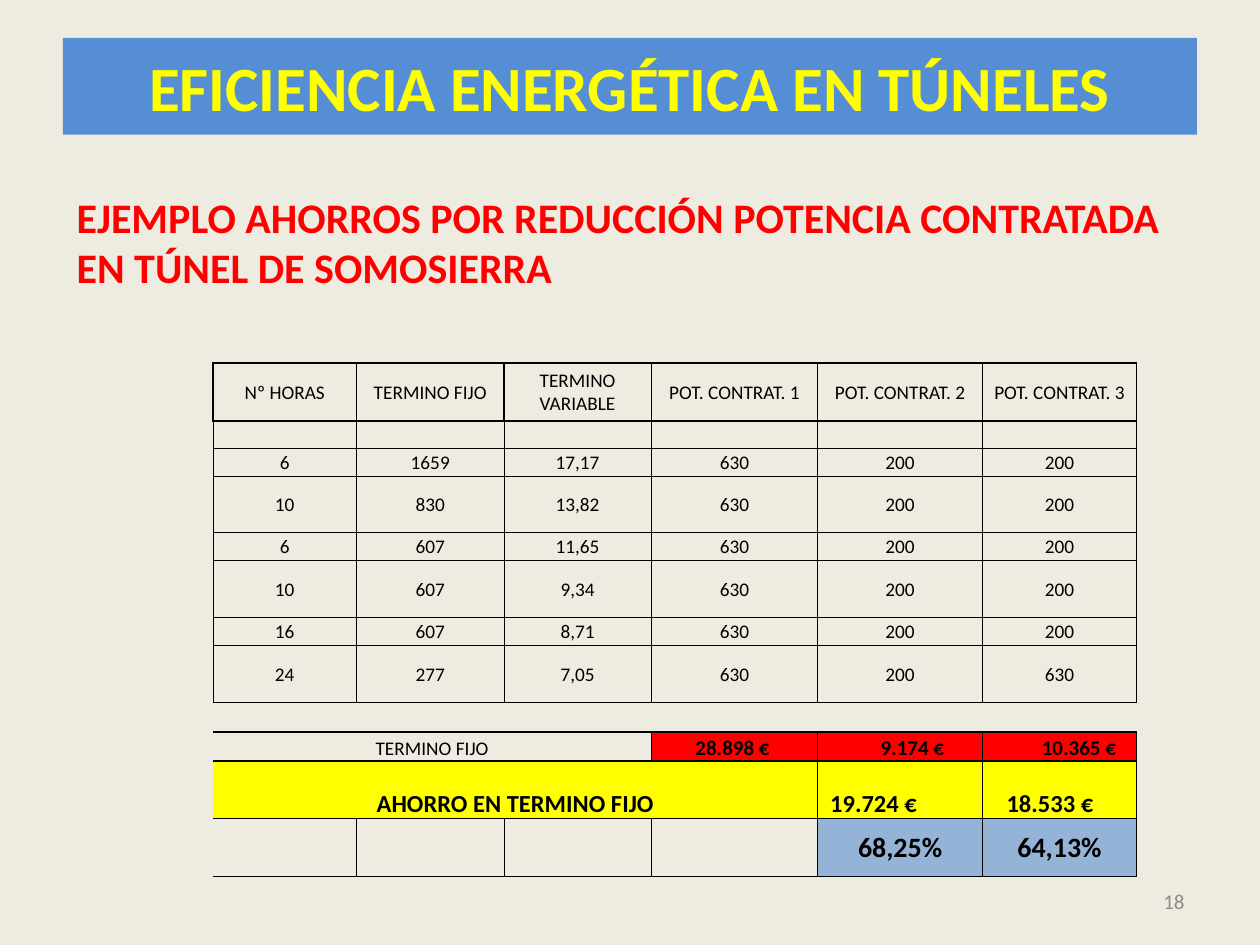
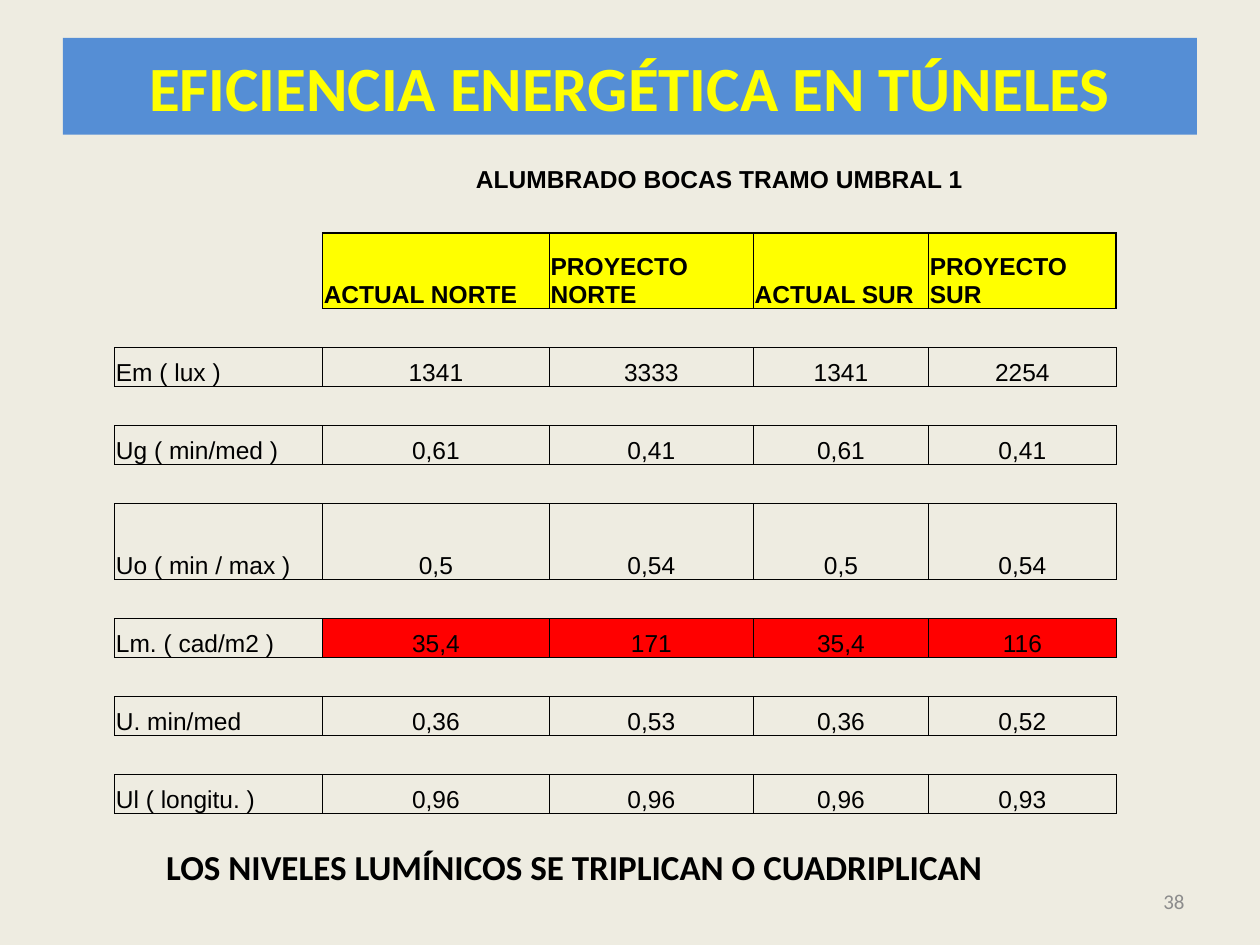
from lxml import etree
from pptx import Presentation
from pptx.dml.color import RGBColor
from pptx.enum.shapes import MSO_SHAPE
from pptx.enum.text import MSO_ANCHOR, PP_ALIGN
from pptx.oxml.ns import qn
from pptx.util import Inches, Pt

BACKGROUND, BAND, PAGE_GREY = "EEECE1", "558ED5", "8C8C8C"
RED, YELLOW, PALE_BLUE, BLACK = "FF0000", "FFFF00", "95B3D7", "000000"
TITLE = "EFICIENCIA ENERGÉTICA EN TÚNELES"
NO_GRID_STYLE = "{2D5ABB26-0587-4C30-8999-92F81FD0307C}"
LEFT, CENTER, RIGHT = PP_ALIGN.LEFT, PP_ALIGN.CENTER, PP_ALIGN.RIGHT
MIDDLE, BOTTOM, TOP = MSO_ANCHOR.MIDDLE, MSO_ANCHOR.BOTTOM, MSO_ANCHOR.TOP

# Border digits are left, top, right, bottom, in half points.


def kind(border, size, bold=False, align=CENTER, anchor=BOTTOM, fill=None):
    return dict(border=border, size=size, bold=bold, align=align,
                anchor=anchor, fill=fill)


COST = kind("1212", 12, True, LEFT, fill=RED)
SAVING = kind("2212", 14, True, LEFT, fill=YELLOW)
RATIO = kind("1212", 16, True, anchor=MIDDLE, fill=PALE_BLUE)
KINDS = {
    "blank": kind("0000", 8),
    "heading": kind("2222", 11, anchor=MIDDLE),
    "value": kind("1111", 11, anchor=MIDDLE),
    "fixed term": kind("0202", 11),
    "cost": COST,
    "last cost": {**COST, "border": "1222"},
    "saving label": kind("0222", 14, True, fill=YELLOW),
    "saving": SAVING,
    "last saving": {**SAVING, "border": "1222"},
    "ratio": RATIO,
    "last ratio": {**RATIO, "border": "1222"},
    "foot": kind("1212", 8),
    "first foot": kind("0212", 8),
    "caption": kind("0000", 14, True),
    "scheme": kind("2222", 14, True, LEFT, fill=YELLOW),
    "measure": kind("1111", 14, align=LEFT),
    "reading": kind("1111", 14),
    "luminance": kind("1111", 14, fill=RED),
}

POWER_COLUMNS = [1.14, 1.17, 1.17, 1.32, 1.31, 1.22]
POWER_VALUES = [
    (0.22, ["6", "1659", "17,17", "630", "200", "200"]),
    (0.45, ["10", "830", "13,82", "630", "200", "200"]),
    (0.22, ["6", "607", "11,65", "630", "200", "200"]),
    (0.45, ["10", "607", "9,34", "630", "200", "200"]),
    (0.22, ["16", "607", "8,71", "630", "200", "200"]),
    (0.46, ["24", "277", "7,05", "630", "200", "630"]),
]
POWER_ROWS = [
    (0.46, "heading", ["Nº HORAS", "TERMINO FIJO", "TERMINO VARIABLE",
                       "POT. CONTRAT. 1", "POT. CONTRAT. 2", "POT. CONTRAT. 3"]),
    (0.22, "value", [""] * 6),
    *[(height, "value", values) for height, values in POWER_VALUES],
    (0.23, "blank", [""] * 6),
    (0.23, "cost", [("TERMINO FIJO", "fixed term", 0, 3), ("28.898 €", "cost", 0.34, 1),
                    ("9.174 €", "cost", 0.49, 1), ("10.365 €", "last cost", 0.46, 1)]),
    (0.46, "saving", [("AHORRO EN TERMINO FIJO", "saving label", 0, 4),
                      ("19.724 €", "saving", 0.09, 1),
                      ("18.533 €", "last saving", 0.18, 1)]),
    (0.46, "foot", [("", "first foot", 0, 1), "", "", "",
                    ("68,25%", "ratio", 0, 1), ("64,13%", "last ratio", 0, 1)]),
]

LIGHT_COLUMNS = [1.65, 1.8, 1.62, 1.39, 1.49]
LIGHT_SCHEMES = ["ACTUAL NORTE", "PROYECTO NORTE", "ACTUAL SUR", "PROYECTO SUR"]
LIGHT_READINGS = [
    (0.31, "Em ( lux )", "reading", ["1341", "3333", "1341", "2254"]),
    (0.31, "Ug ( min/med )", "reading", ["0,61", "0,41", "0,61", "0,41"]),
    (0.6, "Uo ( min / max )", "reading", ["0,5", "0,54", "0,5", "0,54"]),
    (0.31, "Lm. ( cad/m2 )", "luminance", ["35,4", "171", "35,4", "116"]),
    (0.31, "U. min/med", "reading", ["0,36", "0,53", "0,36", "0,52"]),
    (0.31, "Ul ( longitu. )", "reading", ["0,96", "0,96", "0,96", "0,93"]),
]
BLANK_ROW = (0.31, "blank", [""] * 5)
LIGHT_ROWS = [
    (0.31, "blank", ["", ("ALUMBRADO BOCAS TRAMO UMBRAL 1", "caption", 0, 4)]),
    BLANK_ROW,
    (0.6, "scheme", [("", "blank", 0, 1), *LIGHT_SCHEMES]),
]
for height, measure, reading_kind, readings in LIGHT_READINGS:
    LIGHT_ROWS += [BLANK_ROW,
                   (height, reading_kind, [(measure, "measure", 0, 1), *readings])]

SLIDES = [
    dict(page="18", table=(1.69, 2.88, POWER_COLUMNS, POWER_ROWS, "Calibri"),
         message=("EJEMPLO AHORROS POR REDUCCIÓN POTENCIA CONTRATADA "
                  "EN TÚNEL DE SOMOSIERRA", (0.51, 1.47, 8.98, 0.91), 24, RED)),
    dict(page="38", table=(0.91, 1.23, LIGHT_COLUMNS, LIGHT_ROWS, "Arial"),
         message=("LOS NIVELES LUMÍNICOS SE TRIPLICAN O CUADRIPLICAN",
                  (1.22, 6.66, 6.93, 0.44), 20, BLACK)),
]


def color(value):
    return RGBColor.from_string(value)


def write(frame, text, size, ink, bold=False, align=LEFT, font="Calibri"):
    frame.text = text
    frame.word_wrap = True
    paragraph = frame.paragraphs[0]
    paragraph.alignment = align
    for run in paragraph.runs:
        run.font.name, run.font.size, run.font.bold = font, Pt(size), bold
        run.font.color.rgb = color(ink)


def add_text(slide, text, box, size, ink, bold=False, align=LEFT, anchor=TOP):
    frame = slide.shapes.add_textbox(*map(Inches, box)).text_frame
    write(frame, text, size, ink, bold, align)
    frame.vertical_anchor = anchor


def add_title(slide):
    band = slide.shapes.add_shape(MSO_SHAPE.RECTANGLE,
                                  *map(Inches, (0.5, 0.3, 9, 0.77)))
    band.shadow.inherit = False
    band.fill.solid()
    band.fill.fore_color.rgb = color(BAND)
    band.line.fill.background()
    write(band.text_frame, TITLE, 36, YELLOW, True, CENTER)
    band.text_frame.vertical_anchor = MIDDLE


def draw_border(cell, widths):
    properties = cell._tc.get_or_add_tcPr()
    position = 0
    for side, width in zip("LRTB", (widths[i] for i in (0, 2, 1, 3))):
        if width == "0":
            continue
        line = etree.Element(qn(f"a:ln{side}"), w=str(Pt(int(width) / 2)))
        ink = etree.SubElement(etree.SubElement(line, qn("a:solidFill")),
                               qn("a:srgbClr"))
        ink.set("val", BLACK)
        properties.insert(position, line)
        position += 1


def fill_cell(cell, text, style, indent, font):
    cell.margin_left = Inches(0.01 + indent)
    cell.margin_right = cell.margin_top = Inches(0.01)
    cell.margin_bottom = 0
    cell.vertical_anchor = style["anchor"]
    write(cell.text_frame, text, style["size"], BLACK, style["bold"],
          style["align"], font)
    if not text:
        etree.SubElement(cell.text_frame.paragraphs[0]._p, qn("a:endParaRPr"),
                         sz=str(style["size"] * 100))
    if style["fill"]:
        cell.fill.solid()
        cell.fill.fore_color.rgb = color(style["fill"])
    else:
        cell.fill.background()


def add_grid(slide, left, top, columns, rows, font):
    total = sum(height for height, _, _ in rows)
    grid = slide.shapes.add_table(
        len(rows), len(columns),
        *map(Inches, (left, top, sum(columns), total))).table
    grid.first_row = grid.horz_banding = False
    grid._tbl.tblPr.find(qn("a:tableStyleId")).text = NO_GRID_STYLE
    for column, width in zip(grid.columns, columns):
        column.width = Inches(width)

    borders = {}
    for r, (height, row_kind, entries) in enumerate(rows):
        grid.rows[r].height = Inches(height)
        c = 0
        for entry in entries:
            if isinstance(entry, str):
                entry = (entry, row_kind, 0, 1)
            text, name, indent, span = entry
            style = KINDS[name]
            if span > 1:
                grid.cell(r, c).merge(grid.cell(r, c + span - 1))
            for i in range(span):
                fill_cell(grid.cell(r, c + i), "" if i else text, style, indent, font)
                l, t, rt, b = style["border"]
                borders[r, c + i] = ("0" if i else l, t,
                                     rt if i == span - 1 else "0", b)
            c += span

    neighbours = [(0, -1), (-1, 0), (0, 1), (1, 0)]
    for (r, c), own in borders.items():
        shared = [max(own[i], borders.get((r + dr, c + dc), "0000")[(i + 2) % 4])
                  for i, (dr, dc) in enumerate(neighbours)]
        draw_border(grid.cell(r, c), shared)


def main():
    deck = Presentation()
    deck.slide_width, deck.slide_height = Inches(10), Inches(7.5)
    for content in SLIDES:
        slide = deck.slides.add_slide(deck.slide_layouts[6])
        slide.background.fill.solid()
        slide.background.fill.fore_color.rgb = color(BACKGROUND)
        add_title(slide)
        add_text(slide, content["page"], (7.17, 6.95, 2.33, 0.4), 12, PAGE_GREY,
                 align=RIGHT, anchor=MIDDLE)
        add_grid(slide, *content["table"])
        add_text(slide, *content["message"], bold=True)
    deck.save("out.pptx")


if __name__ == "__main__":
    main()
